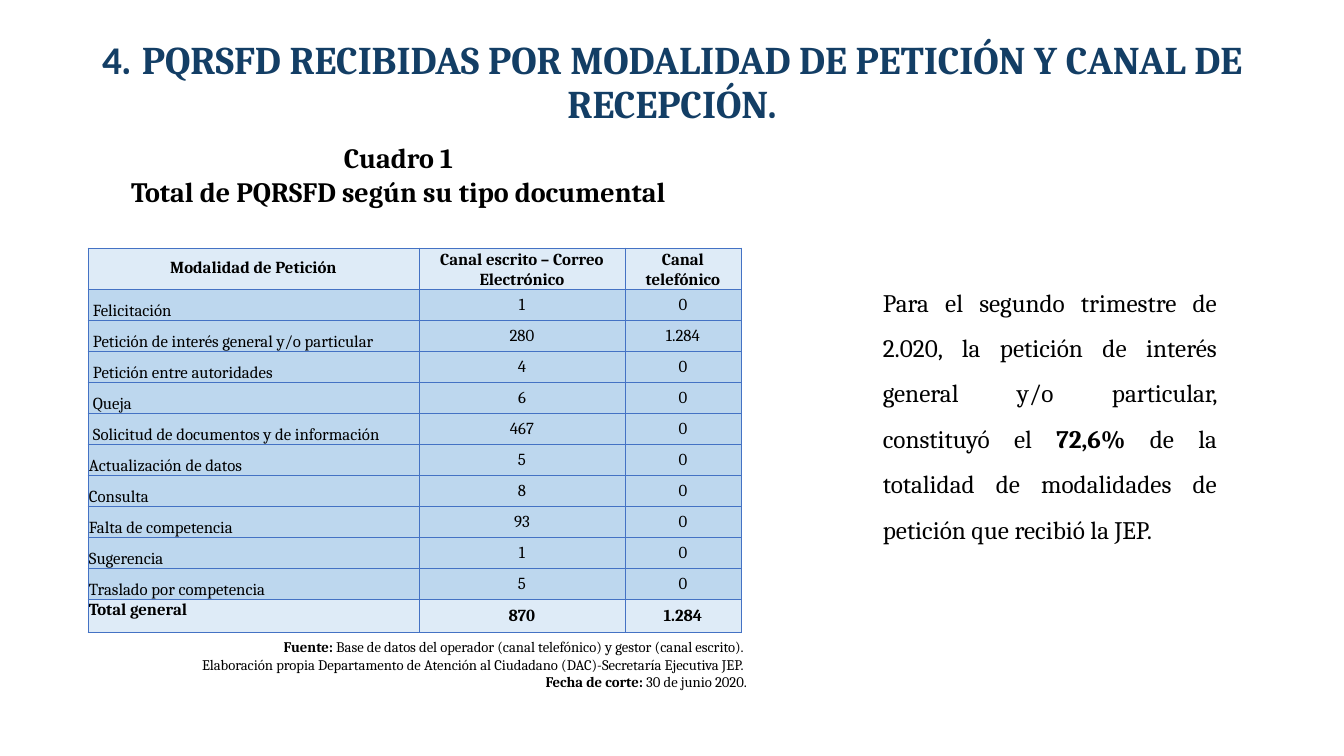
from typing import NamedTuple

from lxml import etree
from pptx import Presentation
from pptx.dml.color import RGBColor
from pptx.enum.text import MSO_ANCHOR, MSO_AUTO_SIZE, PP_ALIGN
from pptx.oxml.ns import qn
from pptx.util import Emu, Pt

LEFT, CENTER, RIGHT, JUSTIFY = PP_ALIGN.LEFT, PP_ALIGN.CENTER, PP_ALIGN.RIGHT, PP_ALIGN.JUSTIFY
MIDDLE, BOTTOM = MSO_ANCHOR.MIDDLE, MSO_ANCHOR.BOTTOM
NO_AUTOFIT, GROW = MSO_AUTO_SIZE.NONE, MSO_AUTO_SIZE.SHAPE_TO_FIT_TEXT

EMU_PER_PX = 914400 / 100.8
SERIF, SANS = "Cambria", "Calibri"
NAVY, BLACK, BORDER = "133E65", "000000", "4472C4"
PALE, SKY = "DEEBF7", "BDD7EE"


class Run(NamedTuple):
    text: str
    size: float
    bold: bool = False
    font: str = SERIF
    color: str = BLACK


class TextBlock(NamedTuple):
    box: tuple[int, int, int, int]
    align: PP_ALIGN
    paragraphs: list[list[Run]]
    line_spacing: float | None = None


class RequestType(NamedTuple):
    name: str
    written: str
    phone: str = "0"
    indented: bool = False


TITLE = [
    Run("4", 28, True, SANS, NAVY),
    Run(".", 28, True, SERIF, NAVY),
    Run(" ", 36, True, SERIF, NAVY),
    Run("PQRSFD RECIBIDAS POR MODALIDAD DE PETICIÓN Y CANAL DE RECEPCIÓN.", 28, True, SERIF, NAVY),
]

TEXT_BLOCKS = [
    TextBlock((873, 267, 354, 285), JUSTIFY, [[
        Run("Para el segundo trimestre de 2.020, la petición de interés general y/o particular, "
            "constituyó el ", 18),
        Run("72,6%", 18, True),
        Run(" de la totalidad de modalidades de petición que recibió la JEP.", 18),
    ]], 1.5),
    TextBlock((77, 136, 643, 78), CENTER, [
        [Run("Cuadro 1", 20, True)],
        [Run("Total de PQRSFD según su tipo documental", 20, True)],
    ]),
    TextBlock((131, 633, 626, 64), RIGHT, [
        [Run("Fuente:", 10.5, True),
         Run(" Base de datos del operador (canal telefónico) y gestor (canal escrito). ", 10.5)],
        [Run("Elaboración propia Departamento de Atención al Ciudadano (DAC)-Secretaría "
             "Ejecutiva JEP. ", 10.5)],
        [Run("Fecha de corte:", 10.5, True), Run(" 30 de junio 2020.", 10.5)],
    ]),
]

HEADER = RequestType("Modalidad de Petición", "Canal escrito – Correo Electrónico", "Canal telefónico")
TOTAL = RequestType("Total general", "870", "1.284")
REQUEST_TYPES = [
    RequestType("Felicitación", "1", indented=True),
    RequestType("Petición de interés general y/o particular", "280", "1.284", True),
    RequestType("Petición entre autoridades", "4", indented=True),
    RequestType("Queja", "6", indented=True),
    RequestType("Solicitud de documentos y de información", "467", indented=True),
    RequestType("Actualización de datos", "5"),
    RequestType("Consulta", "8"),
    RequestType("Falta de competencia", "93"),
    RequestType("Sugerencia", "1"),
    RequestType("Traslado por competencia", "5"),
]
COLUMN_WIDTHS = [331, 206, 116]
HEADER_HEIGHT, ROW_HEIGHT, TOTAL_HEIGHT = 41, 31, 33


def px(length: int) -> Emu:
    return Emu(round(length * EMU_PER_PX))


def rgb(color: str) -> RGBColor:
    return RGBColor.from_string(color)


def add_runs(p, runs: list[Run], align: PP_ALIGN, line_spacing: float | None = None) -> None:
    p.alignment = align
    if line_spacing:
        p.line_spacing = line_spacing
    for run in runs:
        r = p.add_run()
        r.text = run.text
        r.font.size = Pt(run.size)
        r.font.bold = run.bold
        r.font.name = run.font
        r.font.color.rgb = rgb(run.color)


def fill_title(sp) -> None:
    sp.left, sp.top, sp.width, sp.height = map(px, (29, 6, 1286, 146))
    tf = sp.text_frame
    tf.auto_size = NO_AUTOFIT
    tf.vertical_anchor = MIDDLE
    add_runs(tf.paragraphs[0], TITLE, CENTER, 0.9)


def add_text_block(slide, block: TextBlock) -> None:
    tf = slide.shapes.add_textbox(*map(px, block.box)).text_frame
    tf.word_wrap = True
    tf.auto_size = GROW
    for i, runs in enumerate(block.paragraphs):
        p = tf.add_paragraph() if i else tf.paragraphs[0]
        add_runs(p, runs, block.align, block.line_spacing)


def add_borders(cell) -> None:
    tc_pr = cell._tc.get_or_add_tcPr()
    for side in ("lnL", "lnR", "lnT", "lnB"):
        ln = etree.SubElement(tc_pr, qn(f"a:{side}"), w=str(Pt(0.5)))
        fill = etree.SubElement(ln, qn("a:solidFill"))
        etree.SubElement(fill, qn("a:srgbClr"), val=BORDER)


def add_request_table(slide) -> None:
    rows = [HEADER, *REQUEST_TYPES, TOTAL]
    heights = [HEADER_HEIGHT, *[ROW_HEIGHT] * len(REQUEST_TYPES), TOTAL_HEIGHT]
    frame = slide.shapes.add_table(len(rows), len(COLUMN_WIDTHS), px(88), px(248),
                                   px(sum(COLUMN_WIDTHS)), px(sum(heights)))
    table = frame.table
    table.first_row = table.horz_banding = False
    for column, width in zip(table.columns, COLUMN_WIDTHS):
        column.width = px(width)
    for i, (row, height) in enumerate(zip(rows, heights)):
        table.rows[i].height = px(height)
        outer = row in (HEADER, TOTAL)
        for j, text in enumerate((row.name, row.written, row.phone)):
            is_name = j == 0
            cell = table.cell(i, j)
            add_borders(cell)
            cell.fill.solid()
            cell.fill.fore_color.rgb = rgb(PALE if outer else SKY)
            cell.margin_left = px(5 if is_name and row.indented else 1)
            cell.margin_right = cell.margin_top = px(1)
            cell.margin_bottom = px(12 if is_name and outer else 0)
            at_bottom = row is HEADER or (is_name and row is not TOTAL)
            cell.vertical_anchor = BOTTOM if at_bottom else MIDDLE
            align = LEFT if is_name and row is not HEADER else CENTER
            add_runs(cell.text_frame.paragraphs[0], [Run(text, 12, outer)], align)


def main() -> None:
    prs = Presentation()
    prs.slide_width, prs.slide_height = px(1344), px(756)
    slide = prs.slides.add_slide(prs.slide_layouts[5])
    fill_title(slide.shapes.title)
    for block in TEXT_BLOCKS:
        add_text_block(slide, block)
    add_request_table(slide)
    prs.save("out.pptx")


if __name__ == "__main__":
    main()
